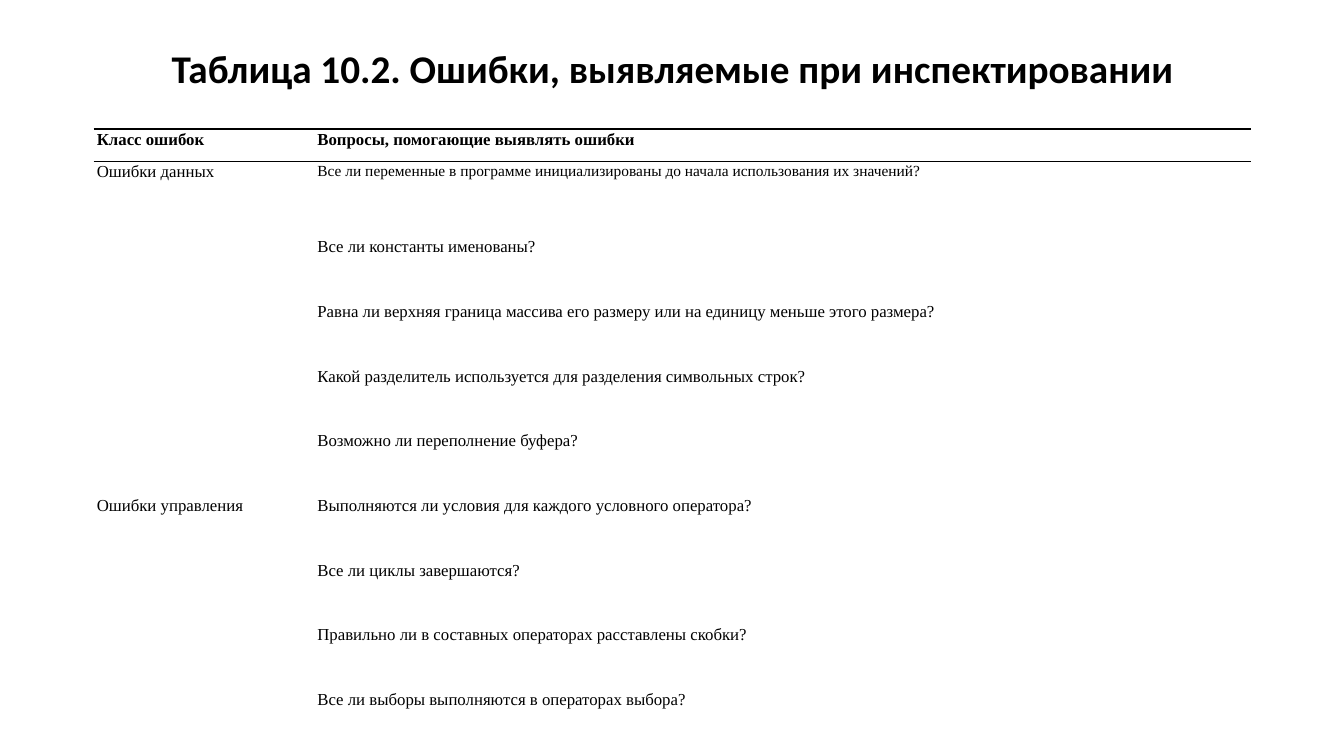
from dataclasses import dataclass

from lxml.etree import SubElement
from pptx import Presentation
from pptx.dml.color import RGBColor
from pptx.enum.text import MSO_ANCHOR, MSO_AUTO_SIZE, PP_ALIGN
from pptx.oxml.ns import qn
from pptx.util import Cm, Pt

HUES = {"ink": "000000", "paper": "FFFFFF"}
SERIF = "Times New Roman"


@dataclass
class Entry:
    group: str
    question: str
    size: float = 12
    bold: bool = False
    height: float = 1.63
    rules: tuple = ()


ENTRIES = [
    Entry("Класс ошибок", "Вопросы, помогающие выявлять ошибки",
          bold=True, height=0.81, rules=("T", "B")),
    Entry("Ошибки данных", "Все ли переменные в программе инициализированы "
          "до начала использования их значений?", size=11, height=1.9, rules=("T",)),
    Entry("", "Все ли константы именованы?"),
    Entry("", "Равна ли верхняя граница массива его размеру "
          "или на единицу меньше этого размера?"),
    Entry("", "Какой разделитель используется для разделения символьных строк?"),
    Entry("", "Возможно ли переполнение буфера?"),
    Entry("Ошибки управления", "Выполняются ли условия для каждого условного оператора?"),
    Entry("", "Все ли циклы завершаются?"),
    Entry("", "Правильно ли в составных операторах расставлены скобки?"),
    Entry("", "Все ли выборы выполняются в операторах выбора?"),
]


def apply(target: object, values: dict) -> None:
    for name, value in values.items():
        setattr(target, name, value)


def write(frame, text: str, font: dict, para: dict) -> None:
    line = frame.paragraphs[0]
    apply(line, para)
    run = line.add_run()
    run.text = text
    apply(run.font, font)
    run.font.color.rgb = RGBColor.from_string(HUES["ink"])


def border(cell, rules: tuple) -> None:
    props = cell._tc.get_or_add_tcPr()
    for side in "LRTB":
        edge = SubElement(props, qn(f"a:ln{side}"), w=str(Pt(1)))
        if side in rules:
            fill = SubElement(edge, qn("a:solidFill"))
            SubElement(fill, qn("a:srgbClr"), val=HUES["ink"])
        else:
            SubElement(edge, qn("a:noFill"))


def fill_cell(cell, text: str, size: float, entry: Entry) -> None:
    border(cell, entry.rules)
    cell.fill.solid()
    cell.fill.fore_color.rgb = RGBColor.from_string(HUES["paper"])
    apply(cell, {"margin_left": Cm(0.08), "margin_right": Cm(0.08),
                 "margin_top": 0, "margin_bottom": 0})
    if text:
        write(cell.text_frame, text,
              {"name": SERIF, "size": Pt(size), "bold": entry.bold},
              {"line_spacing": 1.07})


def add_title(slide) -> None:
    title = slide.shapes.title
    apply(title, {"left": Cm(2.34), "top": Cm(1.12),
                  "width": Cm(29.21), "height": Cm(1.57)})
    apply(title.text_frame, {"word_wrap": True, "auto_size": MSO_AUTO_SIZE.NONE,
                             "vertical_anchor": MSO_ANCHOR.TOP})
    write(title.text_frame, "Таблица 10.2. Ошибки, выявляемые при инспектировании",
          {"name": "Calibri", "size": Pt(28), "bold": True},
          {"alignment": PP_ALIGN.CENTER, "line_spacing": 0.9})


def add_grid(slide) -> None:
    widths = (5.56, 23.6)
    total = sum(entry.height for entry in ENTRIES)
    table = slide.shapes.add_table(len(ENTRIES), len(widths), Cm(2.36), Cm(3.25),
                                   Cm(sum(widths)), Cm(total)).table
    apply(table, {"first_row": False, "horz_banding": False})
    for column, width in zip(table.columns, widths):
        column.width = Cm(width)
    for row, entry in zip(table.rows, ENTRIES):
        row.height = Cm(entry.height)
        fill_cell(row.cells[0], entry.group, 12, entry)
        fill_cell(row.cells[1], entry.question, entry.size, entry)


def main() -> None:
    deck = Presentation()
    apply(deck, {"slide_width": Cm(33.87), "slide_height": Cm(19.05)})
    # Title-only layout
    slide = deck.slides.add_slide(deck.slide_layouts[5])
    add_title(slide)
    # Checklist of error classes
    add_grid(slide)
    deck.save("out.pptx")


if __name__ == "__main__":
    main()
